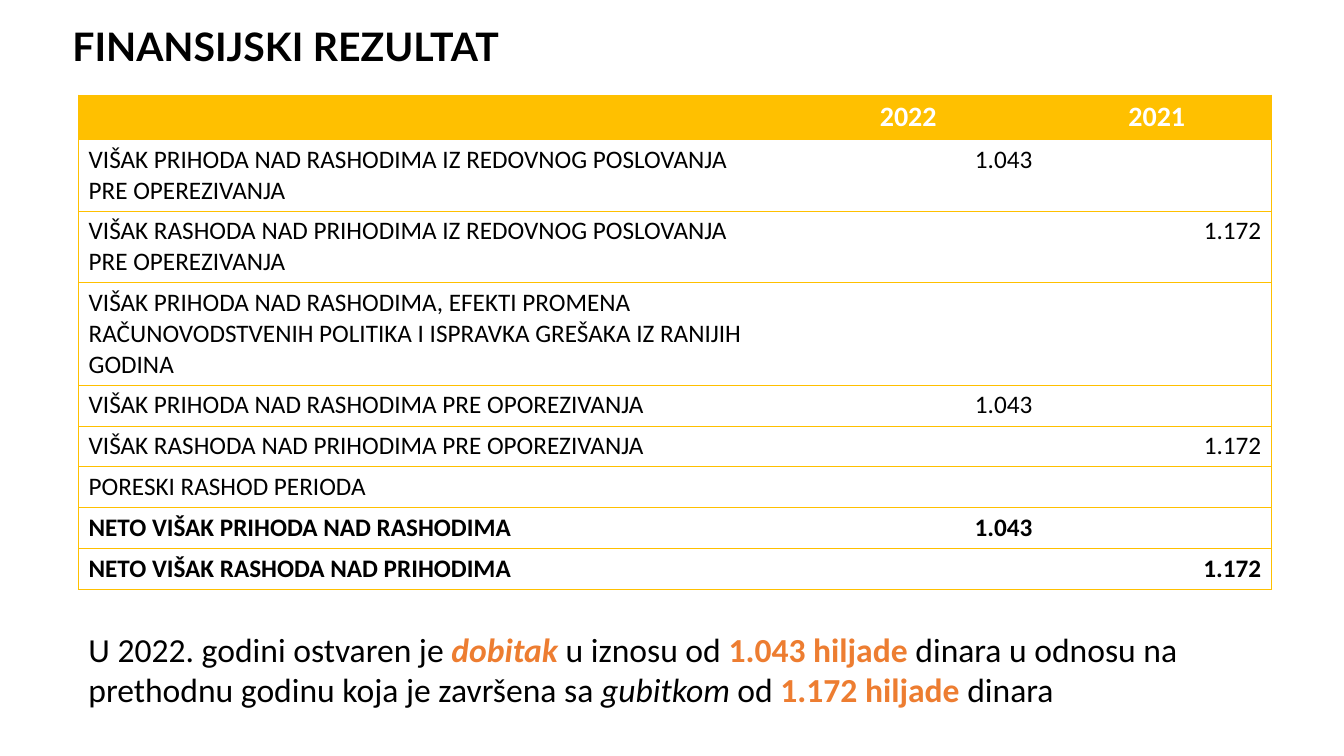
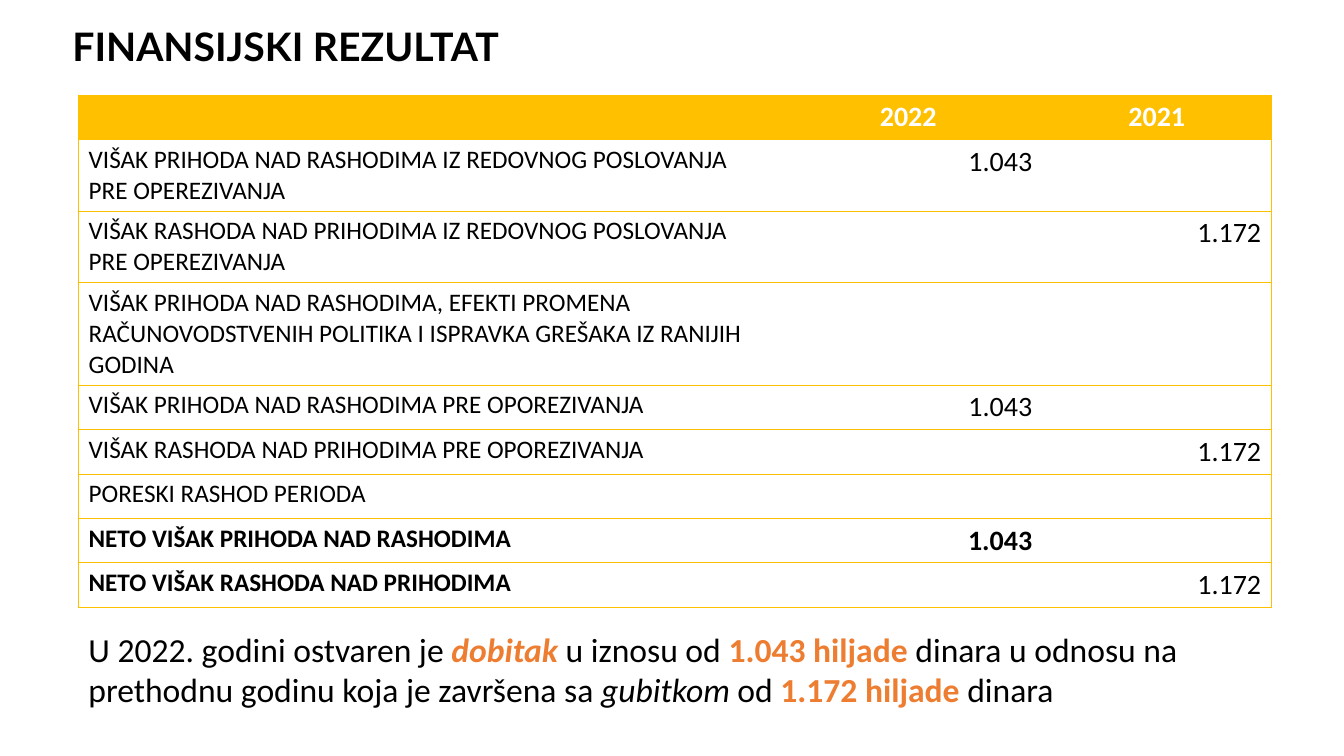
from dataclasses import dataclass

from lxml import etree
from pptx import Presentation
from pptx.dml.color import RGBColor
from pptx.enum import text as tx
from pptx.oxml import ns
from pptx.util import Cm, Pt


@dataclass(frozen=True)
class Theme:
    """Colours, fonts and type sizes of the deck."""
    ink: str = "000000"
    paper: str = "FFFFFF"
    gold: str = "FFC000"
    accent: str = "ED7D31"
    head: str = "Lato"
    body: str = "Calibri"
    title: int = 28
    note: int = 24
    year: int = 20
    label: int = 18
    rule: float = 0.5


T = Theme()
LEFT, CENTER, RIGHT = tx.PP_ALIGN.LEFT, tx.PP_ALIGN.CENTER, tx.PP_ALIGN.RIGHT
PLAIN = "{2D5ABB26-0587-4C30-8999-92F81FD0307C}"
TITLE = "FINANSIJSKI REZULTAT"
TITLE_BOX = (1.57, 0.38, 29.31, 1.7)
TABLE_BOX = (1.98, 2.39, 30.06, 12.34)
NOTE_BOX = (1.98, 15.72, 30.1, 2.31)
COLS = (17.53, 6.76, 5.77)
HEAD = ("", "2022", "2021")
GAIN, LOSS = "1.043", "1.172"
ROWS = (
    (2, "VIŠAK PRIHODA NAD RASHODIMA IZ REDOVNOG POSLOVANJA PRE OPEREZIVANJA", GAIN, ""),
    (2, "VIŠAK RASHODA NAD PRIHODIMA IZ REDOVNOG POSLOVANJA PRE OPEREZIVANJA", "", LOSS),
    (3, "VIŠAK PRIHODA NAD RASHODIMA, EFEKTI PROMENA RAČUNOVODSTVENIH POLITIKA "
        "I ISPRAVKA GREŠAKA IZ RANIJIH GODINA", "", ""),
    (1, "VIŠAK PRIHODA NAD RASHODIMA PRE OPOREZIVANJA", GAIN, ""),
    (1, "VIŠAK RASHODA NAD PRIHODIMA PRE OPOREZIVANJA", "", LOSS),
    (1, "PORESKI RASHOD PERIODA", "", ""),
    (1, "NETO VIŠAK PRIHODA NAD RASHODIMA", GAIN, ""),
    (1, "NETO VIŠAK RASHODA NAD PRIHODIMA", "", LOSS),
)
NOTE = (
    ("U 2022. godini ostvaren je ", ""),
    ("dobitak ", "abi"),
    ("u iznosu od ", ""),
    ("1.043 hiljade ", "ab"),
    ("dinara u odnosu na prethodnu godinu koja je završena sa ", ""),
    ("gubitkom", "i"),
    (" od ", ""),
    ("1.172 hiljade ", "ab"),
    ("dinara", ""),
)


def style(par, size, color=T.ink, bold=False, align=LEFT, face=T.body):
    """Format a whole paragraph."""
    font = par.font
    font.name, font.size, font.bold = face, Pt(size), bold
    font.color.rgb = RGBColor.from_string(color)
    par.alignment = align


def edge(cell, sides):
    """Draw gold rules on the given sides of a cell."""
    props = cell._tc.get_or_add_tcPr()
    for side in sides:
        line = etree.SubElement(props, ns.qn(f"a:ln{side}"), w=str(Pt(T.rule)))
        fill = etree.SubElement(line, ns.qn("a:solidFill"))
        etree.SubElement(fill, ns.qn("a:srgbClr"), val=T.gold)


def put(cell, words, sides, fill, **look):
    """Fill one table cell with text, rules and ground."""
    edge(cell, sides)
    cell.fill.solid()
    cell.fill.fore_color.rgb = RGBColor.from_string(fill)
    par = cell.text_frame.paragraphs[0]
    if words:
        par.text = words
    style(par, **look)


def add_title(slide, box):
    """Place the slide title in its box."""
    shape = slide.shapes.title
    shape.left, shape.top, shape.width, shape.height = map(Cm, box)
    frame = shape.text_frame
    frame.text = TITLE
    frame.auto_size = tx.MSO_AUTO_SIZE.NONE
    frame.vertical_anchor = tx.MSO_ANCHOR.MIDDLE
    par = frame.paragraphs[0]
    par.line_spacing = 0.9
    style(par, T.title, bold=True, face=T.head)


def add_grid(slide, box, size, least, strong):
    """Place the result table; the first strong figures of the net rows are bold."""
    frame = slide.shapes.add_table(len(ROWS) + 1, len(COLS), *map(Cm, box))
    grid = frame.table
    grid.horz_banding = False
    grid._tbl.tblPr.find(ns.qn("a:tableStyleId")).text = PLAIN
    for col, width in zip(grid.columns, COLS):
        col.width = Cm(width)
    ends = ("L", "", "R")
    grid.rows[0].height = Cm(1.12)
    for c, year in enumerate(HEAD):
        put(grid.cell(0, c), year, ends[c] + "TB", T.gold, size=T.year,
            color=T.paper, bold=True, align=CENTER)
    net = len(ROWS) - 1
    for r, (lines, *words) in enumerate(ROWS, 1):
        grid.rows[r].height = Cm(max(least, 0.26 + 0.77 * lines))
        for c, word in enumerate(words):
            bold = r >= net and (c == 0 or r < net + strong)
            put(grid.cell(r, c), word, ends[c] + "TB", T.paper, bold=bold,
                size=size if c else T.label, align=RIGHT if c else LEFT)


def add_note(slide, box):
    """Place the closing sentence with its marked words."""
    frame = slide.shapes.add_textbox(*map(Cm, box)).text_frame
    frame.word_wrap = True
    par = frame.paragraphs[0]
    style(par, T.note)
    for words, marks in NOTE:
        run = par.add_run()
        run.text = words
        if "a" in marks:
            run.font.color.rgb = RGBColor.from_string(T.accent)
        if "b" in marks:
            run.font.bold = True
        if "i" in marks:
            run.font.italic = True


def add_slide(deck, size, least, strong):
    """Build one result slide."""
    slide = deck.slides.add_slide(deck.slide_layouts[5])
    add_title(slide, TITLE_BOX)
    add_grid(slide, TABLE_BOX, size, least, strong)
    add_note(slide, NOTE_BOX)


def main():
    """Build and save the deck."""
    deck = Presentation()
    deck.slide_width, deck.slide_height = Cm(33.87), Cm(19.05)
    add_slide(deck, T.label, 1.03, 2)
    add_slide(deck, T.year, 1.12, 1)
    deck.save("out.pptx")


if __name__ == "__main__":
    main()
